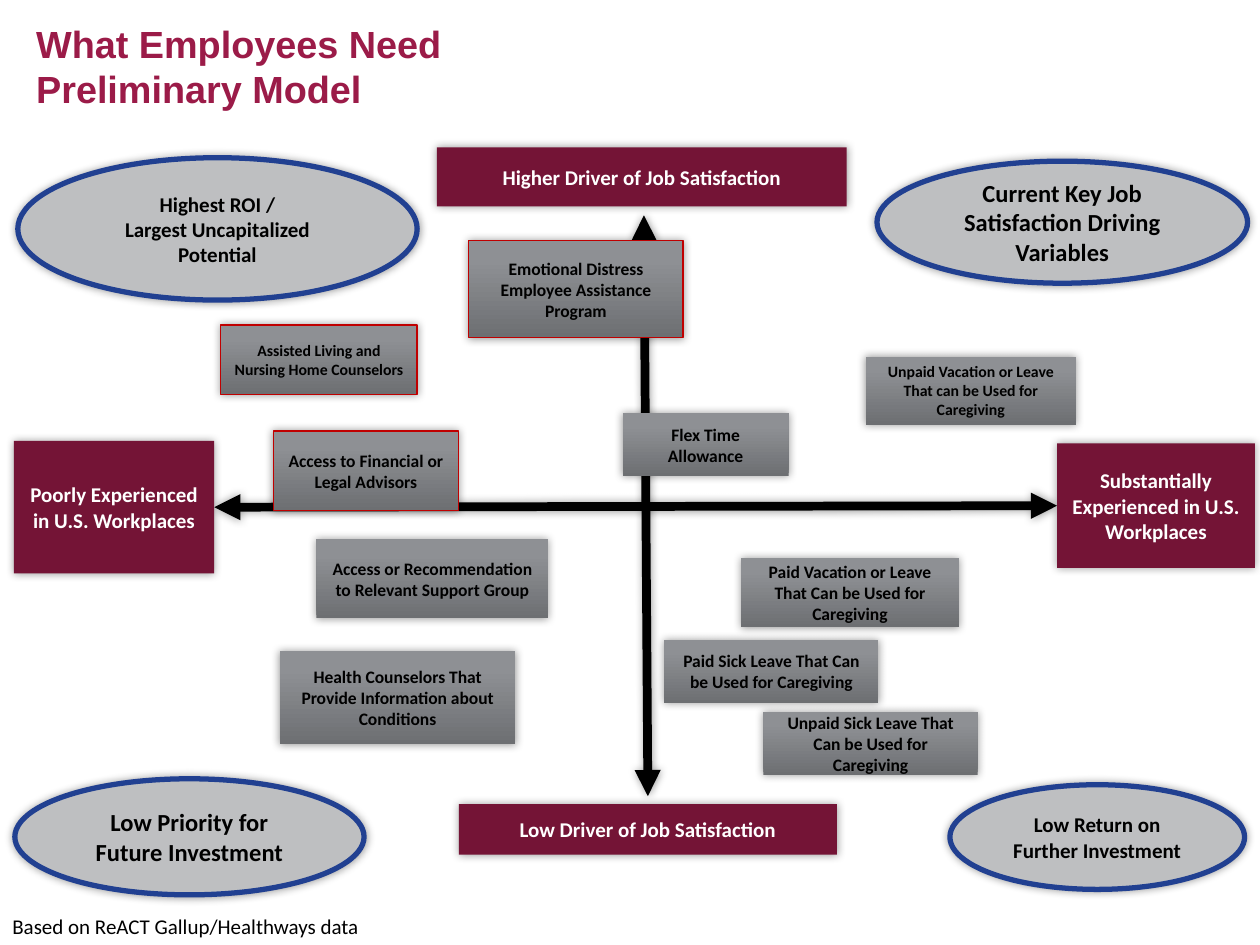
import copy
import pptx
import pptx.util
import pptx.dml.color
import pptx.enum.dml
import pptx.enum.shapes
import pptx.enum.text
import pptx.oxml
import pptx.oxml.ns

Cm, Pt = pptx.util.Cm, pptx.util.Pt
MSO_SHAPE = pptx.enum.shapes.MSO_SHAPE
PP_ALIGN = pptx.enum.text.PP_ALIGN
ANCHOR = pptx.enum.text.MSO_ANCHOR
qn = pptx.oxml.ns.qn

COLORS = {
    "title": "9B1B48", "pole": "741436", "quadrant": "BEBFC1", "ring": "214091",
    "alert": "C00000", "black": "000000", "white": "FFFFFF",
}
GRADIENT = [(0, "6D6F72"), (0.8, "8E9094"), (1, "8E9195")]

TITLE = "What Employees Need\vPreliminary Model"
SOURCE = "Based on ReACT Gallup/Healthways data"

POLES = {
    "top": ("Higher Driver of Job Satisfaction", (8.81, 2.97, 8.26, 1.19)),
    "bottom": ("Low Driver of Job Satisfaction", (9.25, 16.21, 7.62, 1.02)),
    "left": ("Poorly Experienced in U.S. Workplaces", (0.28, 8.89, 4.04, 2.67)),
    "right": ("Substantially Experienced in U.S. Workplaces", (21.31, 8.94, 3.99, 2.51)),
}
QUADRANTS = [
    ("Highest ROI /\nLargest Uncapitalized Potential", (0.36, 3.18, 8.05, 2.87), 12),
    ("Current Key Job Satisfaction Driving Variables", (17.68, 3.25, 7.47, 2.46), 14),
    ("Low Priority for Future Investment", (0.3, 15.7, 7.04, 2.34), 14),
    ("Low Return on Further Investment", (19.15, 15.82, 5.94, 2.11), 12),
]
BENEFITS = [
    ("Paid Sick Leave That Can be Used for Caregiving", (13.39, 12.9, 4.32, 1.27), 10, False),
    ("Assisted Living and Nursing Home Counselors", (4.45, 6.55, 3.96, 1.4), 9, True),
    ("Unpaid Vacation or Leave That can be Used for Caregiving", (17.45, 7.19, 4.24, 1.37), 9, False),
    ("Flex Time Allowance", (12.55, 8.33, 3.35, 1.27), 10, False),
    ("Paid Vacation or Leave That Can be Used for Caregiving", (14.94, 11.25, 4.39, 1.4), 10, False),
    ("Health Counselors That Provide Information about Conditions", (5.64, 13.13, 4.75, 1.88), 10, False),
    ("Access or Recommendation to Relevant Support Group", (6.38, 10.87, 4.67, 1.6), 10, False),
    ("Emotional Distress Employee Assistance Program", (9.45, 4.85, 4.32, 1.96), 10, True),
    ("Access to Financial or Legal Advisors", (5.51, 8.69, 3.73, 1.6), 10, True),
    ("Unpaid Sick Leave That Can be Used for Caregiving", (15.39, 14.35, 4.32, 1.27), 10, False),
]


def rgb(value):
    return pptx.dml.color.RGBColor.from_string(value)


def add_shadow(sp):
    spPr = sp._element.spPr
    for old in spPr.findall(qn("a:effectLst")):
        spPr.remove(old)
    spPr.append(pptx.oxml.parse_xml(
        f'<a:effectLst {pptx.oxml.ns.nsdecls("a")}>'
        f'<a:outerShdw blurRad="{Pt(5)}" dist="0" dir="0" algn="ctr" rotWithShape="0">'
        f'<a:srgbClr val="{COLORS["black"]}"><a:alpha val="40000"/></a:srgbClr>'
        '</a:outerShdw></a:effectLst>'))


def set_text(sp, text, size, color, bold=True, font="Calibri",
             align=PP_ALIGN.CENTER, anchor=ANCHOR.MIDDLE):
    tf = sp.text_frame
    tf.word_wrap = True
    tf.vertical_anchor = anchor
    tf.text = text
    for p in tf.paragraphs:
        p.alignment = align
        for r in p.runs:
            r.font.name, r.font.size, r.font.bold = font, Pt(size), bold
            r.font.color.rgb = rgb(COLORS[color])


def add_node(s, kind, text, box, size, color, fill=None, line=None, width=0):
    sp = s.shapes.add_shape(kind, *map(Cm, box))
    if fill:
        sp.fill.solid()
        sp.fill.fore_color.rgb = rgb(COLORS[fill])
    else:
        set_gradient(sp)
    if line:
        sp.line.color.rgb = rgb(COLORS[line])
        sp.line.width = Pt(width)
    else:
        sp.line.fill.background()
    sp.shadow.inherit = False
    add_shadow(sp)
    set_text(sp, text, size, color)
    return sp


def set_gradient(sp):
    sp.fill.gradient()
    sp.fill.gradient_angle = 90
    stops = sp._element.spPr.find(qn("a:gradFill")).find(qn("a:gsLst"))
    stops.insert(1, copy.deepcopy(stops[0]))
    for stop, (position, color) in zip(sp.fill.gradient_stops, GRADIENT):
        stop.position = position
        stop.color.rgb = rgb(color)


def add_axis(s, x1, y1, x2, y2):
    cx = s.shapes.add_connector(
        pptx.enum.shapes.MSO_CONNECTOR.STRAIGHT, Cm(x1), Cm(y1), Cm(x2), Cm(y2))
    cx.line.color.rgb = rgb(COLORS["black"])
    cx.line.width = Pt(5)
    for tag in ("a:headEnd", "a:tailEnd"):
        end = cx.line._get_or_add_ln().makeelement(qn(tag), {"type": "triangle"})
        cx.line._get_or_add_ln().append(end)
    add_shadow(cx)
    return cx


def add_label(s, box, *args, **kwargs):
    set_text(s.shapes.add_textbox(*map(Cm, box)), *args, align=PP_ALIGN.LEFT, **kwargs)


def main():
    prs = pptx.Presentation()
    prs.slide_width, prs.slide_height = Cm(25.4), Cm(19.05)
    s = prs.slides.add_slide(prs.slide_layouts[6])

    add_label(s, (0.48, 0.51, 24.26, 1.63), TITLE, 21.6, "title", font="Arial")
    experience = add_axis(s, 4.32, 10.23, 21.31, 10.2)
    add_axis(s, 12.98, 4.34, 13.06, 16.05)

    poles = {
        side: add_node(s, MSO_SHAPE.RECTANGLE, text, box, 12, "white", "pole")
        for side, (text, box) in POLES.items()
    }
    experience.begin_connect(poles["left"], 3)
    experience.end_connect(poles["right"], 1)

    for text, box, size in QUADRANTS:
        add_node(s, MSO_SHAPE.OVAL, text, box, size, "black", "quadrant", "ring", 3)
    for text, box, size, flagged in BENEFITS:
        add_node(s, MSO_SHAPE.RECTANGLE, text, box, size, "black",
                 line="alert" if flagged else None, width=0.75)

    add_label(s, (0, 18.29, 14.6, 0.76), SOURCE, 12, "black", bold=False, anchor=ANCHOR.TOP)
    prs.save("out.pptx")


if __name__ == "__main__":
    main()
